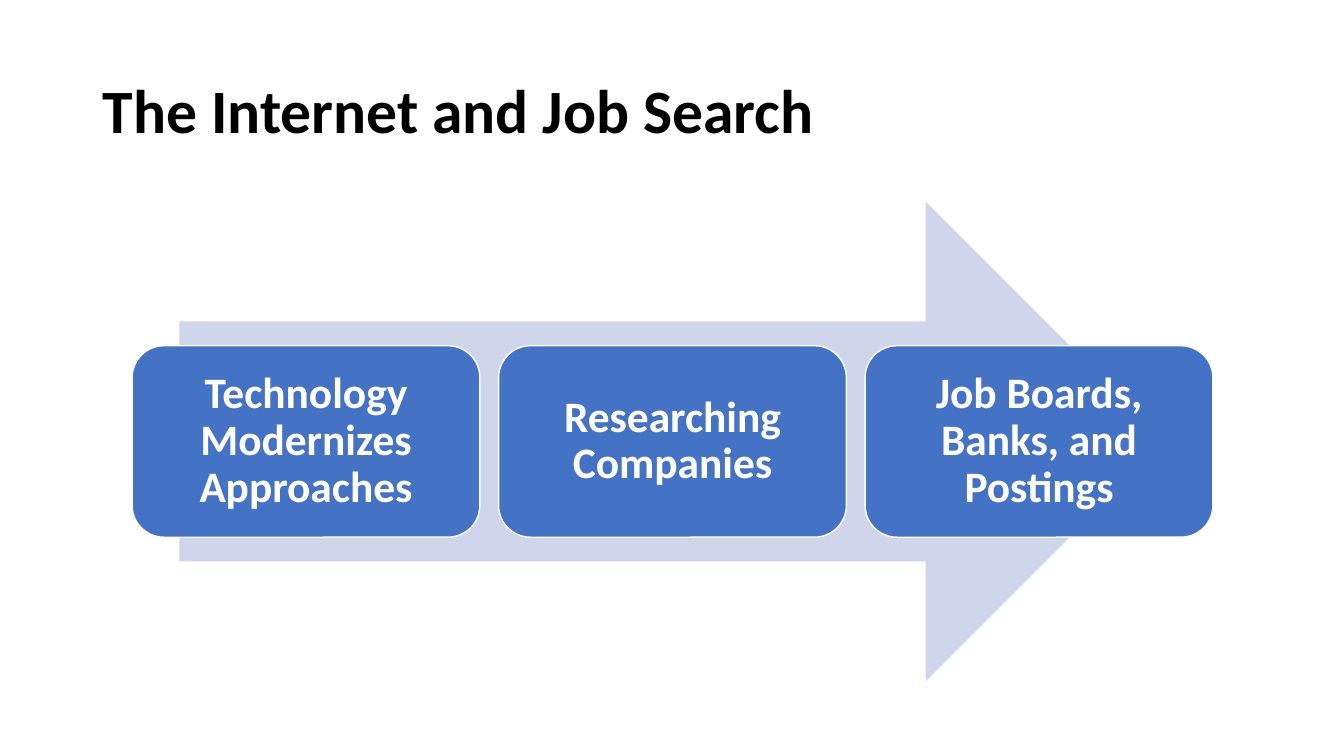
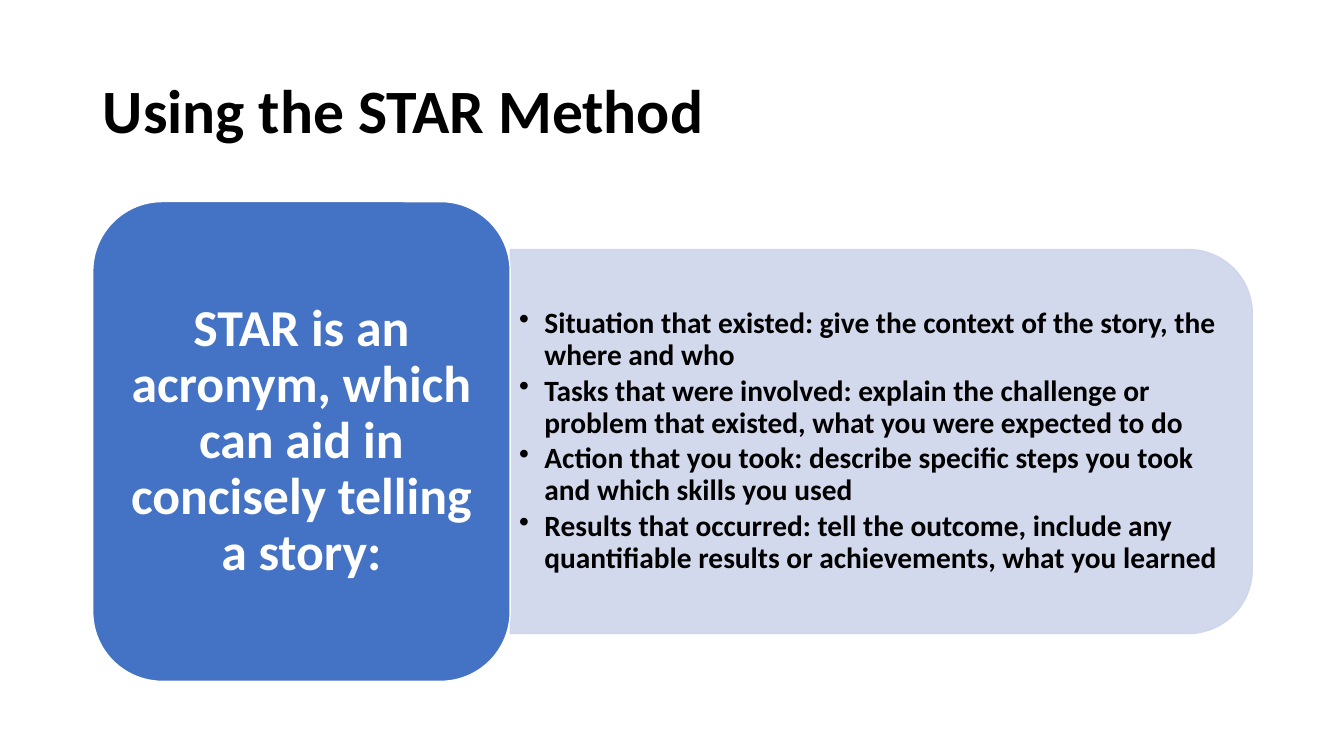
"""Build two job search slides: an arrow of topics and the STAR method."""
from dataclasses import dataclass

from lxml import etree
from pptx import Presentation
from pptx import util as u
from pptx.dml.color import RGBColor
from pptx.enum import shapes, text
from pptx.oxml.ns import qn

TITLES = ["The Internet and Job Search", "Using the STAR Method"]
TOPICS = [
    "Technology Modernizes Approaches",
    "Researching Companies",
    "Job Boards, Banks, and Postings",
]
LEAD = "STAR is an acronym, which can aid in concisely telling a story:"
STEPS = [
    "Situation that existed: give the context of the story, the where and who",
    "Tasks that were involved: explain the challenge or problem that existed, what you were expected to do",
    "Action that you took: describe specific steps you took and which skills you used",
    "Results that occurred: tell the outcome, include any quantifiable results or achievements, what you learned",
]


@dataclass(frozen=True)
class Theme:
    """Colours, font and type sizes."""
    font: str = "Calibri"
    blue: str = "4472C4"
    pale: str = "CFD5EA"
    white: str = "FFFFFF"
    black: str = "000000"
    title: int = 44
    lead: int = 37
    topic: int = 31
    step: int = 21


T = Theme()
KIND = shapes.MSO_SHAPE
PX = 9144
WIDE, HIGH = 1333, 750
TITLE = (92, 40, 1150, 145)
LEFT, RIGHT = 131, 1203
TOP, BASE = 200, 676
TILE_W, TILE_H = 345, 190
LEAD_W = 414
PANEL_W, PANEL_H = 736, 381


def px(*vals):
    """Turn pixels into EMU."""
    return [u.Emu(round(v * PX)) for v in vals]


def write(shape, *lines, size, color=T.black, align="LEFT", inset=(10, 5),
          after=0, bullet=False):
    """Fill a shape with formatted paragraphs."""
    frame = shape.text_frame
    frame.word_wrap = True
    frame.auto_size = text.MSO_AUTO_SIZE.NONE
    frame.vertical_anchor = text.MSO_ANCHOR.MIDDLE
    frame.margin_left, frame.margin_top = px(*inset)
    frame.margin_right, frame.margin_bottom = px(*inset)
    for i, line in enumerate(lines):
        para = frame.add_paragraph() if i else frame.paragraphs[0]
        para.alignment = getattr(text.PP_ALIGN, align)
        para.line_spacing = 0.9
        para.space_after = u.Pt(after)
        if bullet:
            props = para._p.get_or_add_pPr()
            props.set("marL", str(25 * PX))
            props.set("indent", str(-25 * PX))
            etree.SubElement(props, qn("a:buChar"), char="•")
        run = para.add_run()
        run.text = line
        run.font.name, run.font.size, run.font.bold = T.font, u.Pt(size), True
        run.font.color.rgb = RGBColor.from_string(color)


def draw(slide, kind, box, fill, line=None, alpha=100):
    """Add a flat preset shape."""
    shape = slide.shapes.add_shape(kind, *px(*box))
    shape.shadow.inherit = False
    shape.fill.solid()
    shape.fill.fore_color.rgb = RGBColor.from_string(fill)
    if line:
        shape.line.color.rgb = RGBColor.from_string(line)
        shape.line.width = u.Pt(1)
    else:
        shape.line.fill.background()
    if alpha < 100:
        for tint in shape._element.spPr.iter(qn("a:srgbClr")):
            etree.SubElement(tint, qn("a:alpha"), val=str(alpha * 1000))
    return shape


def start(deck, name):
    """Add a slide with its title."""
    slide = deck.slides.add_slide(deck.slide_layouts[5])
    head = slide.shapes.title
    head.left, head.top, head.width, head.height = px(*TITLE)
    write(head, name, size=T.title)
    return slide


def topics(slide):
    """Lay the topic tiles evenly across an arrow."""
    mid = (TOP + BASE) / 2
    draw(slide, KIND.RIGHT_ARROW, (178, TOP, 978, BASE - TOP), T.pale)
    pitch = (RIGHT - LEFT - TILE_W) / (len(TOPICS) - 1)
    for i, topic in enumerate(TOPICS):
        box = (LEFT + i * pitch, mid - TILE_H / 2, TILE_W, TILE_H)
        tile = draw(slide, KIND.ROUNDED_RECTANGLE, box, T.blue, T.white)
        write(tile, topic, size=T.topic, color=T.white, align="CENTER",
              inset=(13, 13))


def star(slide):
    """Set the lead block beside the panel of steps."""
    mid = (TOP + BASE) / 2
    edge = TITLE[0] + LEAD_W
    box = (edge + (PANEL_W - PANEL_H) / 2, mid - PANEL_W / 2, PANEL_H, PANEL_W)
    panel = draw(slide, KIND.ROUND_2_SAME_RECTANGLE, box, T.pale, T.pale, 90)
    panel.rotation = 90
    steps = slide.shapes.add_textbox(*px(edge, mid - 172, 717, 344))
    write(steps, *STEPS, size=T.step, inset=(9, 4), after=3, bullet=True)
    box = (TITLE[0], TOP, LEAD_W, BASE - TOP)
    lead = draw(slide, KIND.ROUNDED_RECTANGLE, box, T.blue, T.white)
    write(lead, LEAD, size=T.lead, color=T.white, align="CENTER",
          inset=(15, 8))


def main():
    """Build and save the deck."""
    deck = Presentation()
    deck.slide_width, deck.slide_height = px(WIDE, HIGH)
    for name, fill in zip(TITLES, (topics, star)):
        fill(start(deck, name))
    deck.save("out.pptx")


if __name__ == "__main__":
    main()
